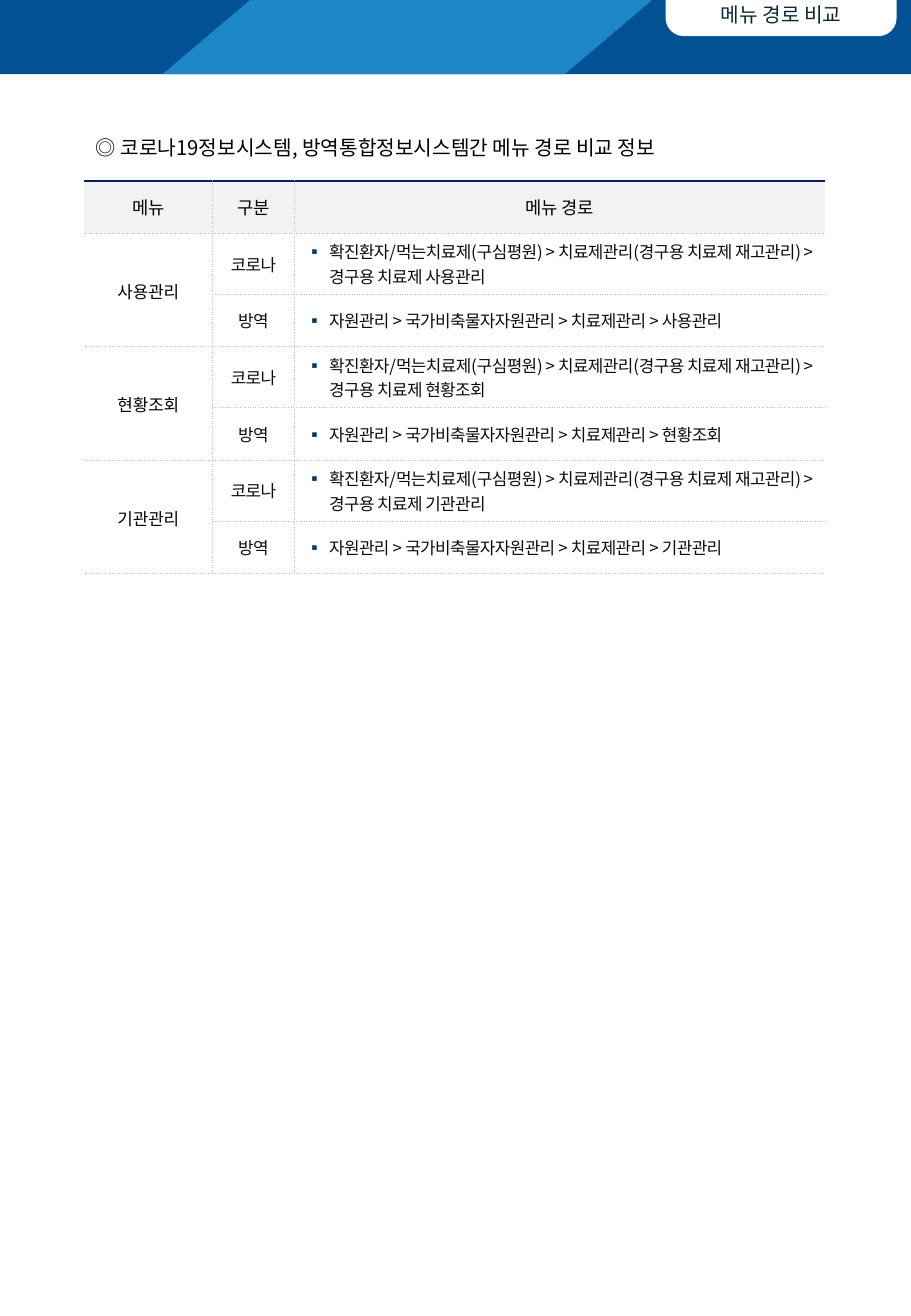
from lxml import etree
from pptx import Presentation
from pptx import util as u
from pptx.dml.color import RGBColor
from pptx.enum import shapes, text
from pptx.oxml import ns

FONT = "Noto Sans CJK KR"
DOTTED = ("BFBFBF", 0.5, "sysDot")
TOP_RULE = ("002060", 1, "solid")
HEADERS = ("메뉴", "구분", "메뉴 경로")
MENUS = ("사용관리", "현황조회", "기관관리")
PATHS = (
    ("코로나", "확진환자/먹는치료제(구심평원) > 치료제관리(경구용 치료제 재고관리) > 경구용 치료제 {}"),
    ("방역", "자원관리 > 국가비축물자자원관리 > 치료제관리 > {}"),
)


def rgb(value):
    """Turn a hex string into a colour."""
    return RGBColor.from_string(value)


def cm(*values):
    """Turn numbers into lengths in centimetres."""
    return [u.Cm(v) for v in values]


def apply(obj, values):
    """Set each attribute of an object from a dict."""
    for name, value in values.items():
        setattr(obj, name, value)


def add(parent, tag, **attrs):
    """Append a drawing element with its attributes."""
    return etree.SubElement(parent, ns.qn("a:" + tag), attrs)


def write(tf, words, size, color, spc=0, **fmt):
    """Write one formatted paragraph in a text frame and return it."""
    p = tf.paragraphs[0]
    apply(p, fmt)
    r = p.add_run()
    r.text = words
    apply(r.font, {"name": FONT, "size": u.Pt(size), "bold": False})
    r.font.color.rgb = rgb(color)
    rPr = r.font._element
    add(rPr, "ea", typeface=FONT)
    if spc:
        rPr.set("spc", str(spc))
    return p


def add_block(slide, kind, box, color, adjustments=()):
    """Add a flat preset shape without an outline."""
    sp = slide.shapes.add_shape(kind, *cm(*box))
    sp.shadow.inherit = False
    sp.fill.solid()
    sp.fill.fore_color.rgb = rgb(color)
    sp.line.fill.background()
    for i, value in enumerate(adjustments):
        sp.adjustments[i] = value
    return sp


def add_banner(slide, x, y, w, h):
    """Draw the top banner with its stripe and label tab."""
    kinds = shapes.MSO_SHAPE
    add_block(slide, kinds.RECTANGLE, (x, y, w, h), "025192")
    add_block(slide, kinds.PARALLELOGRAM, (x + 3.4, y, 10.24, h), "1C86C8", [1.18])
    tab = add_block(slide, kinds.ROUND_2_SAME_RECTANGLE,
                    (x + 13.92, y, 4.83, h / 2 - 0.02), "FFFFFF", [0, 0.5])
    tf = tab.text_frame
    apply(tf, {"vertical_anchor": text.MSO_ANCHOR.MIDDLE, "word_wrap": True,
               "margin_top": 0, "margin_bottom": 0})
    write(tf, "메뉴 경로 비교", 12, "0B2837",
          alignment=text.PP_ALIGN.CENTER, line_spacing=0.9)


def add_title(slide, x, y, w, h):
    """Place the page heading in the title placeholder."""
    sp = slide.shapes.title
    apply(sp, dict(zip(("left", "top", "width", "height"), cm(x, y, w, h))))
    tf = sp.text_frame
    apply(tf, {"auto_size": text.MSO_AUTO_SIZE.NONE, "word_wrap": True,
               "vertical_anchor": text.MSO_ANCHOR.MIDDLE,
               "margin_top": u.Cm(0.2), "margin_bottom": u.Cm(0.13)})
    write(tf, "◎ 코로나19정보시스템, 방역통합정보시스템간 메뉴 경로 비교 정보",
          12, "000000", alignment=text.PP_ALIGN.LEFT)


def style_cell(cell, fill, left, right, top):
    """Give a cell its borders, fill and anchor."""
    tcPr = cell._tc.get_or_add_tcPr()
    for side, border in zip("LRTB", (left, right, top, DOTTED)):
        if border:
            color, width, dash = border
            ln = add(tcPr, "ln" + side, w=str(u.Pt(width)))
            add(add(ln, "solidFill"), "srgbClr", val=color)
            add(ln, "prstDash", val=dash)
        else:
            add(add(tcPr, "ln" + side, w="0"), "noFill")
    cell.fill.solid()
    cell.fill.fore_color.rgb = rgb(fill)
    cell.vertical_anchor = text.MSO_ANCHOR.MIDDLE


def add_bullet(p):
    """Give a paragraph a small square bullet with a hanging indent."""
    pPr = p._p.get_or_add_pPr()
    pPr.set("marL", str(u.Cm(0.48)))
    pPr.set("indent", str(u.Cm(-0.48)))
    add(add(pPr, "buClr"), "srgbClr", val="013967")
    add(pPr, "buFont", typeface=FONT)
    add(pPr, "buChar", char="▪")


def add_menu_table(slide, x, y, w, row_h):
    """Build the table that compares the menu paths."""
    rows = 1 + len(MENUS) * len(PATHS)
    table = slide.shapes.add_table(rows, 3, *cm(x, y, w, row_h * rows)).table
    apply(table, {"first_row": False, "horz_banding": False})
    for column, width in zip(table.columns, (2.7, 1.7, w - 4.4)):
        column.width = u.Cm(width)
    for i in range(rows):
        for j in range(3):
            style_cell(table.cell(i, j), "FFFFFF" if i else "F2F2F2",
                       DOTTED if j else None, DOTTED if j < 2 else None,
                       DOTTED if i else TOP_RULE)

    center = {"alignment": text.PP_ALIGN.CENTER}
    for j, header in enumerate(HEADERS):
        write(table.cell(0, j).text_frame, header, 10.5, "000000", **center)
    for m, menu in enumerate(MENUS):
        start = 1 + m * len(PATHS)
        cell = table.cell(start, 0)
        cell.merge(table.cell(start + len(PATHS) - 1, 0))
        apply(cell, {"margin_left": u.Cm(0.1), "margin_right": u.Cm(0.1),
                     "margin_top": u.Cm(0.03), "margin_bottom": 0})
        write(cell.text_frame, menu, 10, "000000", **center)
        for i, (system, route) in enumerate(PATHS, start):
            body = {"size": 10, "color": "0D0D0D", "spc": -30, "space_after": u.Pt(3)}
            write(table.cell(i, 1).text_frame, system, **body, **center)
            add_bullet(write(table.cell(i, 2).text_frame, route.format(menu), **body))


def main():
    """Build the slide and save it."""
    prs = Presentation()
    apply(prs, {"slide_width": u.Cm(19.05), "slide_height": u.Cm(27.51)})
    slide = prs.slides.add_slide(prs.slide_layouts[5])
    add_banner(slide, 0, 0, 19.05, 1.55)
    add_title(slide, 1.75, 2.64, 14.43, 0.81)
    add_menu_table(slide, 1.75, 3.78, 15.5, 1.1)
    prs.save("out.pptx")


if __name__ == "__main__":
    main()
